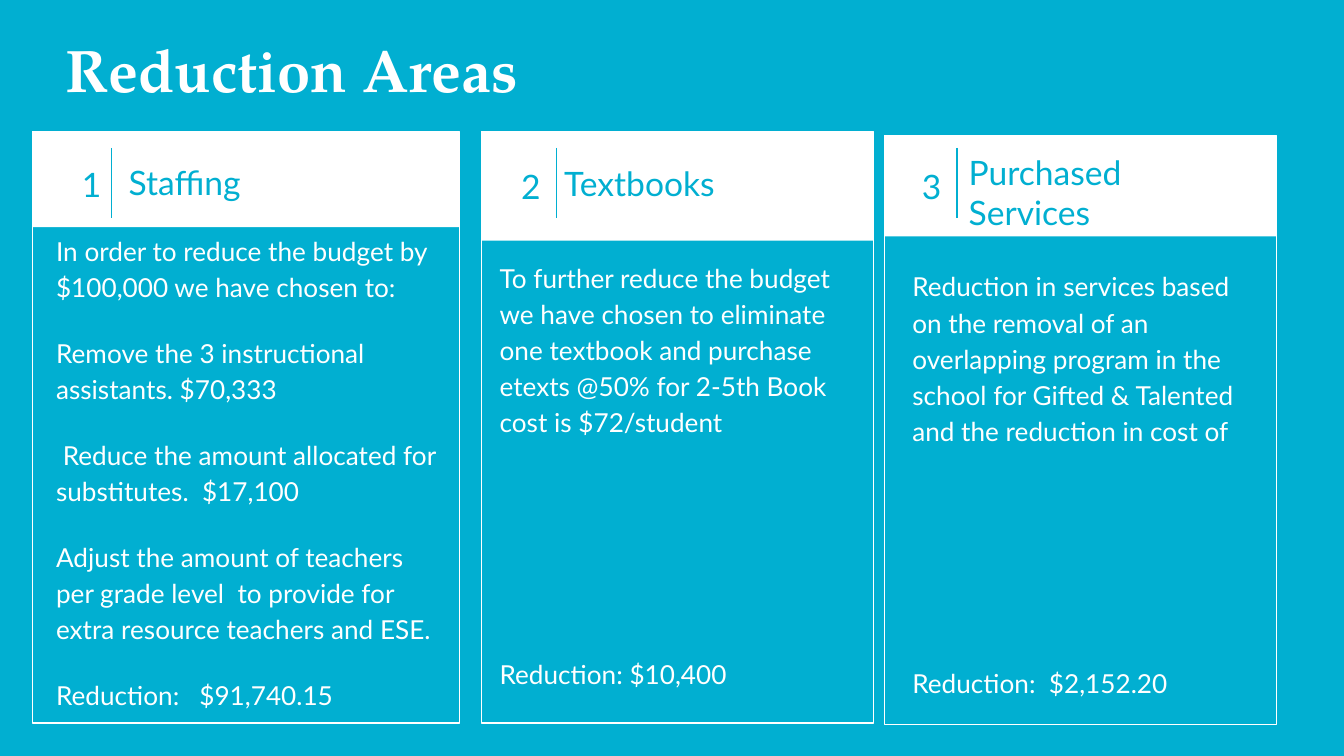
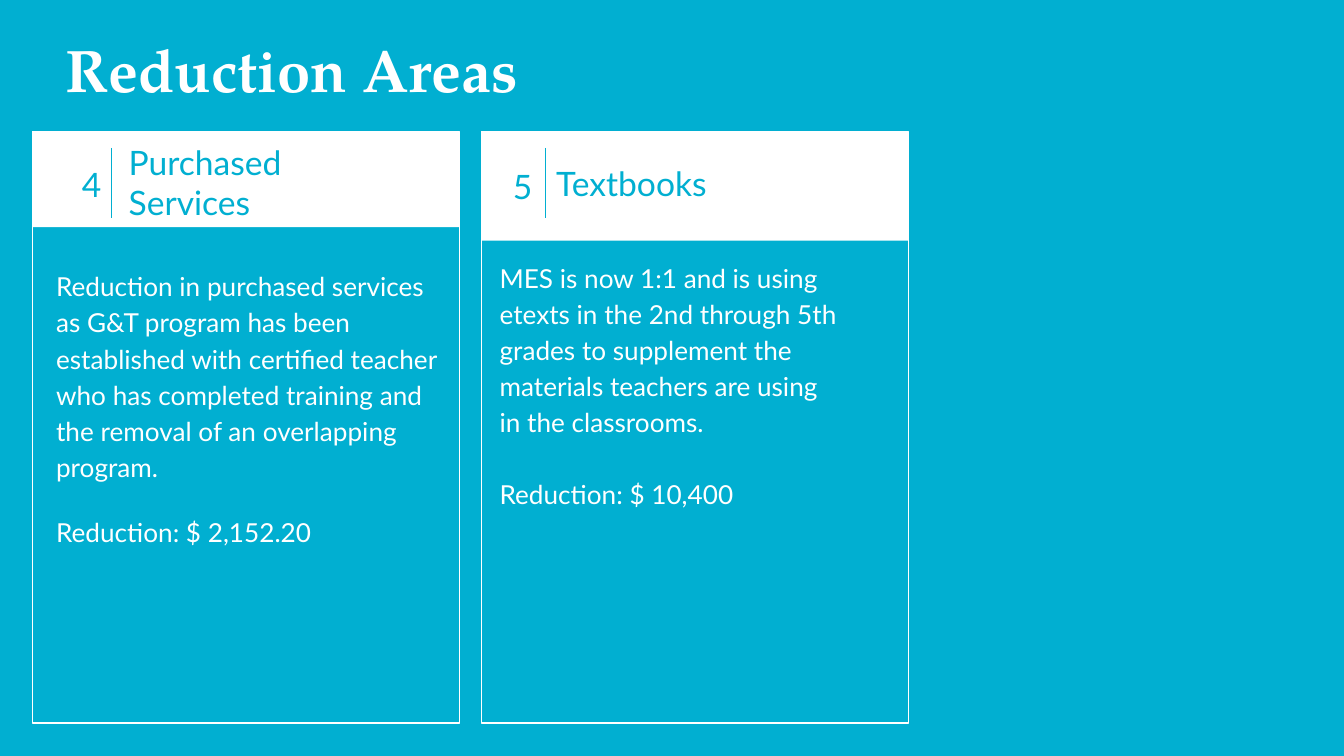
from lxml import etree
from pptx import Presentation
from pptx.dml.color import RGBColor
from pptx.enum import shapes, text
from pptx.oxml.ns import qn
from pptx.util import Pt

COLORS = {"sky": "01AFD1", "white": "FFFFFF"}
RGB = {name: RGBColor.from_string(value) for name, value in COLORS.items()}
LEFT, CENTER, RIGHT = text.PP_ALIGN.LEFT, text.PP_ALIGN.CENTER, text.PP_ALIGN.RIGHT
TOP, MIDDLE = text.MSO_ANCHOR.TOP, text.MSO_ANCHOR.MIDDLE
BODY_SIZE, HEADING_SIZE = 14, 18
RULE_TOP, RULE_BOTTOM = 79.2, 116.6
BLANK_LINE = 19.3

staffing_frame = dict(
    frame=(17.3, 70.6, 229, 316.8), band=51.1,
    number_at=(35.3, 74.9, 27.4, 44.6), number_align=CENTER, rule=59.8,
    heading_at=(61.9, 70.6, 158.4, 54), filled=False)
textbook_frame = dict(
    frame=(257.8, 70.6, 210.2, 316.8), band=58.3,
    number_at=(270.7, 65.5, 27.4, 64.8), number_align=CENTER, rule=298.1,
    heading_at=(295.2, 65.5, 165.6, 64.8), body_at=(260.6, 131, 199.4, 187.2),
    filled=True)
services_frame = dict(
    frame=(473.8, 72.7, 210.2, 315.4), band=54,
    number_at=(485.3, 65.5, 27.4, 64.8), number_align=CENTER, rule=512.6,
    heading_at=(511.9, 70.6, 148.3, 64.8), body_at=(481.7, 135.4, 199.4, 223.9),
    filled=False)

first_cards = [
    dict(staffing_frame, number="1", heading="Staffing", gap=16,
         body_at=(23, 116.6, 223.2, 329.8), body=[
             "In order to reduce the budget by $100,000 we have chosen to:",
             "Remove the 3 instructional assistants. $70,333",
             " Reduce the amount allocated for substitutes.  $17,100",
             "Adjust the amount of teachers per grade level  to provide for "
             "extra resource teachers and ESE.",
             "Reduction:   $91,740.15"]),
    dict(textbook_frame, number="2", heading="Textbooks", gap=6 * BLANK_LINE, body=[
        "To further reduce the budget we have chosen to eliminate one textbook "
        "and purchase etexts @50% for 2-5th Book cost is $72/student",
        "Reduction: $10,400"]),
    dict(services_frame, number="3", heading="Purchased Services",
         gap=6 * BLANK_LINE, body=[
             "Reduction in services based on the removal of an overlapping program "
             "in the school for Gifted & Talented and the reduction in cost of",
             "Reduction:  $2,152.20"]),
]
second_cards = [
    dict(staffing_frame, number="4", heading="Purchased Services", gap=16,
         body_at=(23, 135.4, 223.2, 241.9), body=[
             "Reduction in purchased services as G&T program has been established "
             "with certified teacher who has completed training and the removal "
             "of an overlapping program.",
             "Reduction: $ 2,152.20"]),
    dict(textbook_frame, number="5", heading="Textbooks", gap=BLANK_LINE,
         frame=(257.8, 70.6, 229, 316.8), number_at=(252.7, 65.5, 39.6, 64.8),
         number_align=RIGHT, rule=292.3, heading_at=(290.9, 65.5, 165.6, 64.8),
         body=[
             "MES is now 1:1 and is using etexts in the 2nd through 5th grades to "
             "supplement the materials teachers are using in the classrooms.",
             "Reduction: $ 10,400"]),
]


def write(holder, place, lines, size, color, font="Lato", bold=False,
          align=LEFT, anchor=TOP, spacing=1.0, gap=0):
    holder.left, holder.top, holder.width, holder.height = map(Pt, place)
    frame = holder.text_frame
    frame.word_wrap = True
    frame.auto_size = text.MSO_AUTO_SIZE.NONE
    frame.vertical_anchor = anchor
    frame.margin_left = frame.margin_right = Pt(7.2)
    frame.margin_top = frame.margin_bottom = Pt(7.2)
    frame.text = "\n".join(lines)
    for index, paragraph in enumerate(frame.paragraphs):
        paragraph.alignment = align
        paragraph.line_spacing = spacing
        paragraph.space_before = Pt(gap if index else 0)
        paragraph.font.name = font
        paragraph.font.size = Pt(size)
        paragraph.font.bold = bold
        paragraph.font.color.rgb = RGB[color]


def add_box(parent, place):
    box = parent.add_shape(shapes.MSO_SHAPE.RECTANGLE, *map(Pt, place))
    box.shadow.inherit = False
    return box


prs = Presentation()
prs.slide_width, prs.slide_height = Pt(720), Pt(405)
background = prs.slide_master.background.fill
background.solid()
background.fore_color.rgb = RGB["sky"]

for cards in (first_cards, second_cards):
    slide = prs.slides.add_slide(prs.slide_layouts[5])
    write(slide.shapes.title, (28.1, 10.1, 658.8, 54), ["Reduction Areas"], 32,
          "white", font="TeX Gyre Pagella", bold=True)

    for card in cards:
        left, top, width, height = card["frame"]
        panel = slide.shapes.add_group_shape().shapes
        outline = add_box(panel, card["frame"])
        outline.fill.background()
        outline.line.color.rgb = RGB["white"]
        outline.line.width = Pt(0.75)
        band = add_box(panel, (left, top, width, card["band"]))
        band.fill.solid()
        band.fill.fore_color.rgb = RGB["white"]
        band.line.fill.background()

        number = slide.shapes.add_textbox(0, 0, 0, 0)
        write(number, card["number_at"], [card["number"]], HEADING_SIZE, "sky",
              align=card["number_align"], anchor=MIDDLE, spacing=1.15)

        rule = slide.shapes.add_connector(
            shapes.MSO_CONNECTOR.STRAIGHT, Pt(card["rule"]), Pt(RULE_TOP),
            Pt(card["rule"]), Pt(RULE_BOTTOM))
        rule.line.color.rgb = RGB["sky"]
        rule.line.width = Pt(0.75)
        etree.SubElement(rule._element.spPr, qn("a:effectLst"))

        heading = slide.shapes.add_textbox(0, 0, 0, 0)
        write(heading, card["heading_at"], [card["heading"]], HEADING_SIZE, "sky",
              anchor=MIDDLE)

        body = slide.shapes.add_textbox(0, 0, 0, 0)
        write(body, card["body_at"], card["body"], BODY_SIZE, "white",
              spacing=1.15, gap=card["gap"])
        if card["filled"]:
            body.fill.solid()
            body.fill.fore_color.rgb = RGB["sky"]

prs.save("out.pptx")
